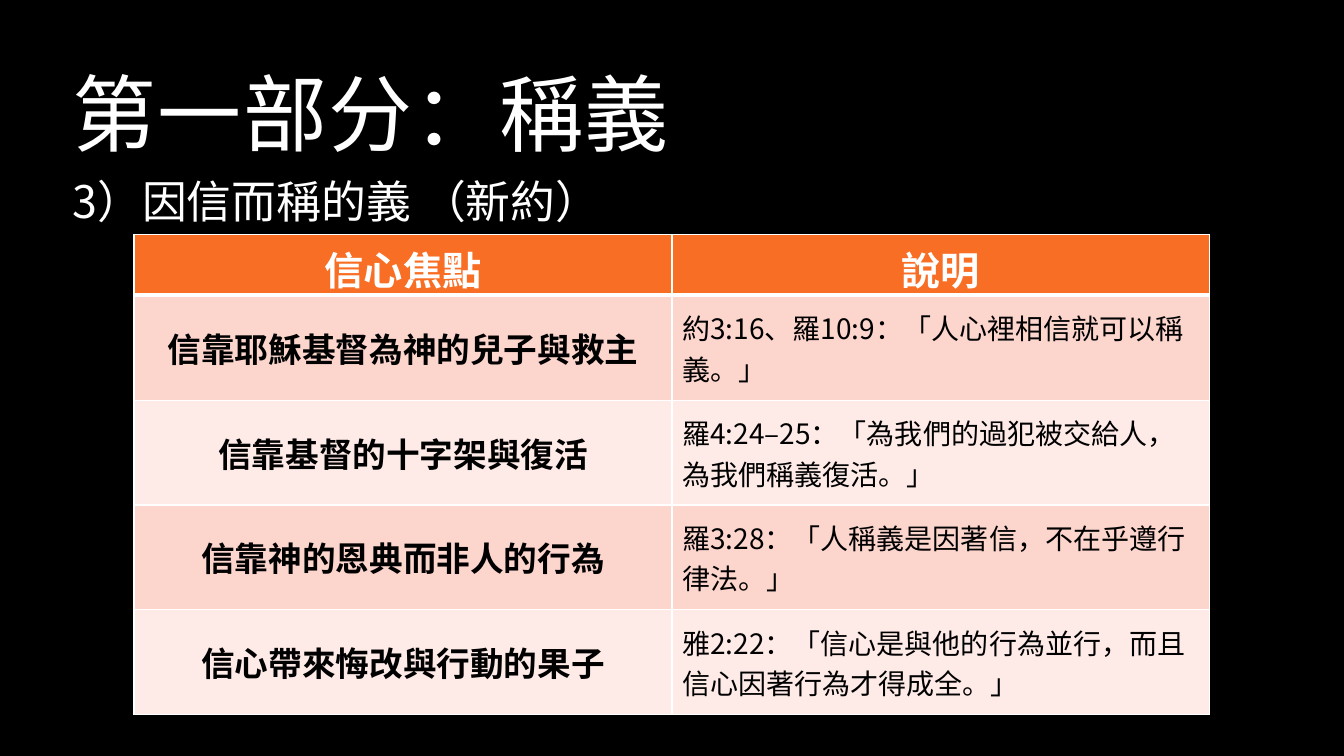
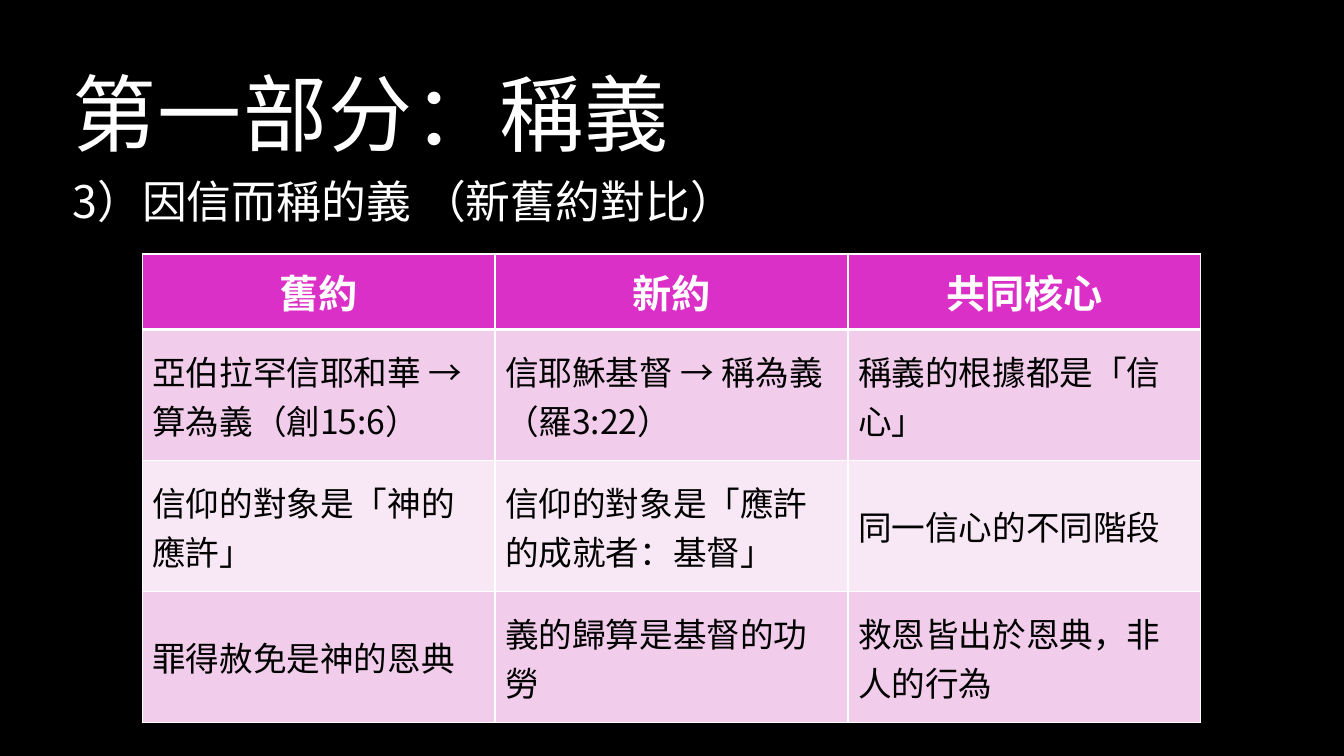
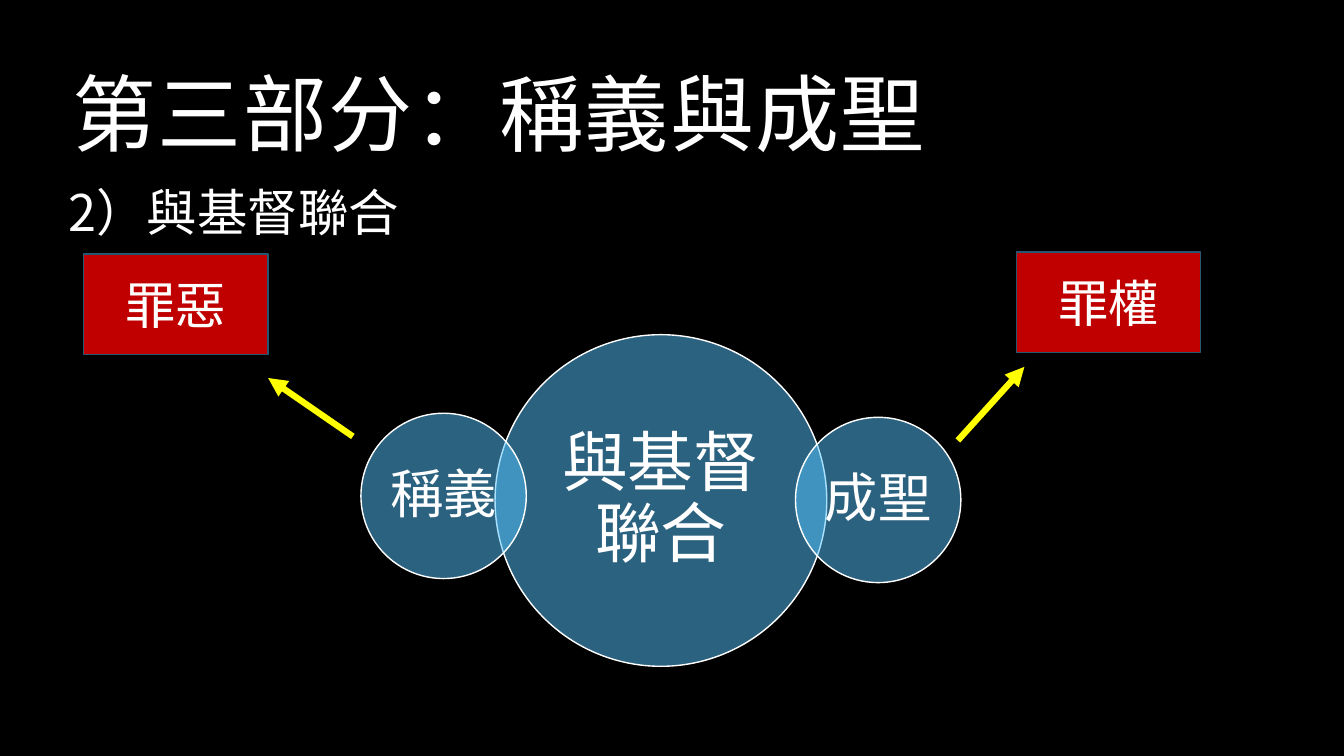
from dataclasses import dataclass

from lxml import etree
from pptx import Presentation
from pptx.dml.color import RGBColor
from pptx.enum.shapes import MSO_CONNECTOR, MSO_SHAPE
from pptx.enum.text import MSO_ANCHOR, MSO_AUTO_SIZE, PP_ALIGN
from pptx.oxml.ns import qn
from pptx.shapes.autoshape import Shape
from pptx.slide import Slide
from pptx.text.text import TextFrame
from pptx.util import Inches, Pt

LEFT, CENTER = PP_ALIGN.LEFT, PP_ALIGN.CENTER
TOP, MIDDLE, BOTTOM = MSO_ANCHOR.TOP, MSO_ANCHOR.MIDDLE, MSO_ANCHOR.BOTTOM
OVAL, RECT = MSO_SHAPE.OVAL, MSO_SHAPE.RECTANGLE
STRAIGHT = MSO_CONNECTOR.STRAIGHT
FIXED = MSO_AUTO_SIZE.NONE


@dataclass(frozen=True)
class Theme:
    back: str = "000000"
    light: str = "FFFFFF"
    dark: str = "000000"
    ring: str = "56C5FF"
    sin: str = "C00000"
    edge: str = "265670"
    arrow: str = "FFFF00"
    head: str = "Arial"
    body: str = "Noto Sans CJK SC"
    title: int = 60
    core: int = 47
    side: int = 38
    large: int = 36
    sub: int = 32
    label: int = 28
    cell: int = 24
    small: int = 20


THEME = Theme()


@dataclass(frozen=True)
class Col:
    size: int
    bold: bool = False
    align: PP_ALIGN = LEFT


@dataclass(frozen=True)
class Grid:
    left: float
    top: float
    width: float
    head: float  # header height
    row: float  # body row height
    fills: tuple[str, str, str]  # header, odd rows, even rows
    cols: list[Col]
    rows: list[list[str]]


@dataclass(frozen=True)
class Ring:
    text: str
    left: float
    top: float
    side: float
    size: int
    inset: float


@dataclass(frozen=True)
class Box:
    text: str
    left: float
    top: float


@dataclass(frozen=True)
class Arrow:
    start: tuple[float, float]
    end: tuple[float, float]


def rgb(code: str) -> RGBColor:
    return RGBColor.from_string(code)


def put(frame: TextFrame, text: str, *, size: int, font: str = THEME.body,
        color: str = THEME.light, bold: bool = False, align: PP_ALIGN = LEFT,
        anchor: MSO_ANCHOR = MIDDLE, lead: float = 1.0, track: float = 0) -> None:
    """Write one formatted paragraph; track is letter spacing in points."""
    frame.word_wrap = True
    frame.vertical_anchor = anchor
    para = frame.paragraphs[0]
    para.alignment, para.line_spacing = align, lead
    run = para.add_run()
    run.text = text
    run.font.size, run.font.bold, run.font.name = Pt(size), bold, font
    run.font.color.rgb = rgb(color)
    props = run.font._element
    if track:
        props.set("spc", str(round(track * 100)))
    etree.SubElement(props, qn("a:ea")).set("typeface", THEME.body)


def start(prs: Presentation, title: str, sub: str, *, left: float = 0.62,
          top: float = 1.67, size: int = THEME.sub) -> Slide:
    """Add a slide with its title and subtitle."""
    slide = prs.slides.add_slide(prs.slide_layouts[5])
    head = slide.shapes.title
    head.left, head.top = Inches(0.62), Inches(0.17)
    head.width, head.height = Inches(11.88), Inches(1.5)
    head.text_frame.auto_size = FIXED
    put(head.text_frame, title, size=THEME.title, font=THEME.head,
        anchor=BOTTOM, lead=0.9, track=1)
    line = slide.shapes.add_textbox(Inches(left), Inches(top), Inches(12.08), Inches(0.8))
    put(line.text_frame, sub, size=size, anchor=TOP)
    return slide


def border(cell, top: float, bottom: float) -> None:
    props = cell._tc.get_or_add_tcPr()
    for side, width in (("L", 1), ("R", 1), ("T", top), ("B", bottom)):
        line = etree.SubElement(props, qn(f"a:ln{side}"), w=str(Pt(width)))
        fill = etree.SubElement(line, qn("a:solidFill"))
        etree.SubElement(fill, qn("a:srgbClr"), val=THEME.light)


def draw_grid(slide: Slide, grid: Grid) -> None:
    count = len(grid.rows)
    high = grid.head + grid.row * (count - 1)
    table = slide.shapes.add_table(
        count, len(grid.cols), Inches(grid.left), Inches(grid.top),
        Inches(grid.width), Inches(high)).table
    for r, texts in enumerate(grid.rows):
        table.rows[r].height = Inches(grid.row if r else grid.head)
        shade = grid.fills[2 - r % 2 if r else 0]
        for c, (text, col) in enumerate(zip(texts, grid.cols)):
            cell = table.cell(r, c)
            border(cell, top=3 if r == 1 else 1, bottom=1 if r else 3)
            cell.fill.solid()
            cell.fill.fore_color.rgb = rgb(shade)
            if r:
                put(cell.text_frame, text, size=col.size, bold=col.bold,
                    align=col.align, color=THEME.dark)
            else:
                put(cell.text_frame, text, size=THEME.label, bold=True, align=CENTER)
            cell.vertical_anchor = MIDDLE


def add_shape(slide: Slide, kind: MSO_SHAPE, left: float, top: float,
              width: float, height: float, fill: str, line: str) -> Shape:
    shape = slide.shapes.add_shape(kind, Inches(left), Inches(top),
                                   Inches(width), Inches(height))
    shape.shadow.inherit = False
    shape.fill.solid()
    shape.fill.fore_color.rgb = rgb(fill)
    shape.line.color.rgb = rgb(line)
    shape.line.width = Pt(1)
    return shape


def draw_ring(slide: Slide, ring: Ring) -> None:
    shape = add_shape(slide, OVAL, ring.left, ring.top, ring.side, ring.side,
                      THEME.ring, THEME.light)
    # Half transparent, so overlaps show lighter
    tint = shape._element.spPr.find(qn("a:solidFill"))[0]
    etree.SubElement(tint, qn("a:alpha"), val="50000")
    frame = shape.text_frame
    frame.margin_left = frame.margin_right = Inches(ring.inset)
    frame.margin_top = frame.margin_bottom = Inches(ring.inset)
    put(frame, ring.text, size=ring.size, align=CENTER, lead=0.9)


def draw_box(slide: Slide, box: Box) -> None:
    shape = add_shape(slide, RECT, box.left, box.top, 1.83, 1, THEME.sin, THEME.edge)
    put(shape.text_frame, box.text, size=THEME.large, font=THEME.head, align=CENTER)


def draw_arrow(slide: Slide, arrow: Arrow) -> None:
    ends = [Inches(n) for n in (*arrow.start, *arrow.end)]
    line = slide.shapes.add_connector(STRAIGHT, *ends)
    line.line.color.rgb = rgb(THEME.arrow)
    line.line.width = Pt(4.5)
    etree.SubElement(line.line._get_or_add_ln(), qn("a:tailEnd"), type="triangle")
    etree.SubElement(line._element.spPr, qn("a:effectLst"))


# Tables
FAITH = Grid(
    1.33, 2.33, 10.67, 0.6, 1.04, ("F86E24", "FCD5CD", "FEEBE8"),
    [Col(THEME.cell, True, CENTER), Col(THEME.small)],
    [["信心焦點", "說明"],
     ["信靠耶穌基督為神的兒子與救主", "約3:16、羅10:9：「人心裡相信就可以稱義。」"],
     ["信靠基督的十字架與復活", "羅4:24–25：「為我們的過犯被交給人，為我們稱義復活。」"],
     ["信靠神的恩典而非人的行為", "羅3:28：「人稱義是因著信，不在乎遵行律法。」"],
     ["信心帶來悔改與行動的果子", "雅2:22：「信心是與他的行為並行，而且信心因著行為才得成全。」"]])

PACT = Grid(
    1.41, 2.52, 10.5, 0.75, 1.3, ("DB30C7", "F1CDEB", "F8E8F5"),
    [Col(THEME.cell)] * 3,
    [["舊約", "新約", "共同核心"],
     ["亞伯拉罕信耶和華 → 算為義（創15:6）", "信耶穌基督 → 稱為義（羅3:22）", "稱義的根據都是「信心」"],
     ["信仰的對象是「神的應許」", "信仰的對象是「應許的成就者：基督」", "同一信心的不同階段"],
     ["罪得赦免是神的恩典", "義的歸算是基督的功勞", "救恩皆出於恩典，非人的行為"]])

# Diagram
RINGS = [Ring("與基督聯合", 4.91, 3.32, 3.29, THEME.core, 0.07),
         Ring("稱義", 3.58, 4.1, 1.64, THEME.side, 0.04),
         Ring("成聖", 7.89, 4.14, 1.64, THEME.side, 0.04)]
BOXES = [Box("罪惡", 0.83, 2.52), Box("罪權", 10.08, 2.5)]
ARROWS = [Arrow((3.5, 4.33), (2.66, 3.75)), Arrow((9.5, 4.37), (10.16, 3.64))]


def main() -> None:
    prs = Presentation()
    prs.slide_width, prs.slide_height = Inches(13.33), Inches(7.5)
    back = prs.slide_master.background.fill
    back.solid()
    back.fore_color.rgb = rgb(THEME.back)

    # Table slides
    for sub, grid in (("3）因信而稱的義 （新約）", FAITH),
                      ("3）因信而稱的義 （新舊約對比）", PACT)):
        draw_grid(start(prs, "第一部分：稱義", sub), grid)

    # Union slide
    slide = start(prs, "第三部分：稱義與成聖", "2）與基督聯合",
                  left=0.58, top=1.75, size=THEME.large)
    for ring in RINGS:
        draw_ring(slide, ring)
    for box in BOXES:
        draw_box(slide, box)
    for arrow in ARROWS:
        draw_arrow(slide, arrow)

    prs.save("out.pptx")


if __name__ == "__main__":
    main()
